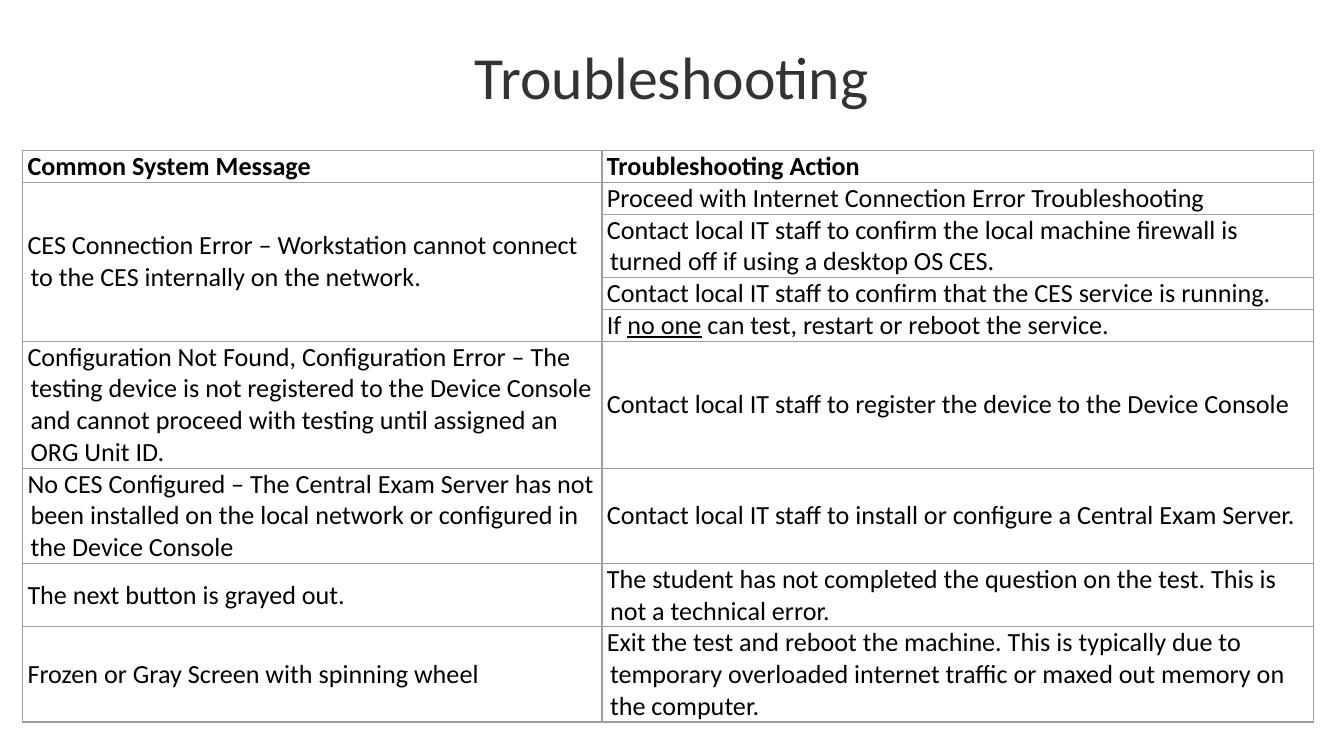
from lxml.etree import SubElement
from pptx import Presentation
from pptx.dml.color import RGBColor
from pptx.enum.text import MSO_ANCHOR, PP_ALIGN
from pptx.oxml.ns import qn
from pptx.util import Cm, Pt

FONT = "Calibri"
LINE_HEIGHT = 0.6
COLUMN_WIDTHS = (10.95, 13.44)
ROW_LINES = (1, 1, 2, 1, 1, 4, 3, 2, 3)
ROWS = (
    ("Common System Message", "Troubleshooting Action"),
    ("CES Connection Error – Workstation cannot connect to the CES internally on the network.",
     "Proceed with Internet Connection Error Troubleshooting"),
    ("", "Contact local IT staff to confirm the local machine firewall is "
         "turned off if using a desktop OS CES."),
    ("", "Contact local IT staff to confirm that the CES service is running."),
    ("", ("If ", "no one", " can test, restart or reboot the service.")),
    ("Configuration Not Found, Configuration Error – The testing device is not registered "
     "to the Device Console and cannot proceed with testing until assigned an ORG Unit ID.",
     "Contact local IT staff to register the device to the Device Console"),
    ("No CES Configured – The Central Exam Server has not been installed on the local "
     "network or configured in the Device Console",
     "Contact local IT staff to install or configure a Central Exam Server."),
    ("The next button is grayed out.",
     "The student has not completed the question on the test. This is not a technical error."),
    ("Frozen or Gray Screen with spinning wheel",
     "Exit the test and reboot the machine. This is typically due to temporary overloaded "
     "internet traffic or maxed out memory on the computer."),
)


def rgb(value):
    return RGBColor.from_string(value)


def add_run(p, text, size, color, bold=False, underline=False):
    r = p.add_run()
    r.text = text
    r.font.name = FONT
    r.font.size = Pt(size)
    r.font.bold = bold
    r.font.underline = underline
    r.font.color.rgb = rgb(color)


def add_title(s, text):
    sp = s.shapes.add_textbox(0, 0, Cm(25.4), Cm(2.85))
    tf = sp.text_frame
    tf.word_wrap = True
    tf.vertical_anchor = MSO_ANCHOR.MIDDLE
    p = tf.paragraphs[0]
    p.alignment = PP_ALIGN.CENTER
    add_run(p, text, 32, "333333")


def set_borders(cell, color, width):
    tcPr = cell._tc.get_or_add_tcPr()
    for side in ("a:lnL", "a:lnR", "a:lnT", "a:lnB"):
        ln = SubElement(tcPr, qn(side), w=str(Pt(width)))
        fill = SubElement(ln, qn("a:solidFill"))
        SubElement(fill, qn("a:srgbClr"), val=color)


def fill_cell(cell, content, bold):
    set_borders(cell, "9E9E9E", 0.75)
    cell.fill.background()
    cell.vertical_anchor = MSO_ANCHOR.MIDDLE
    cell.margin_left = cell.margin_right = cell.margin_top = cell.margin_bottom = 0
    if not content:
        return
    p = cell.text_frame.paragraphs[0]
    pPr = p._p.get_or_add_pPr()
    pPr.set("marL", str(Cm(0.15)))
    pPr.set("indent", str(Cm(-0.06)))
    parts = (content,) if isinstance(content, str) else content
    for i, text in enumerate(parts):
        add_run(p, text, 14, "000000", bold, underline=i == 1)


def add_message_table(s):
    height = sum(ROW_LINES) * LINE_HEIGHT
    sp = s.shapes.add_table(len(ROWS), len(COLUMN_WIDTHS), Cm(0.43), Cm(2.85),
                            Cm(sum(COLUMN_WIDTHS)), Cm(height))
    table = sp.table
    table.first_row = table.horz_banding = False
    for column, width in zip(table.columns, COLUMN_WIDTHS):
        column.width = Cm(width)
    for i, (contents, lines) in enumerate(zip(ROWS, ROW_LINES)):
        table.rows[i].height = Cm(lines * LINE_HEIGHT)
        for j, content in enumerate(contents):
            fill_cell(table.cell(i, j), content, bold=i == 0)
    table.cell(1, 0).merge(table.cell(4, 0))


def main():
    prs = Presentation()
    prs.slide_width, prs.slide_height = Cm(25.4), Cm(14.29)
    s = prs.slides.add_slide(prs.slide_layouts[6])
    add_title(s, "Troubleshooting")
    add_message_table(s)
    prs.save("out.pptx")


if __name__ == "__main__":
    main()
